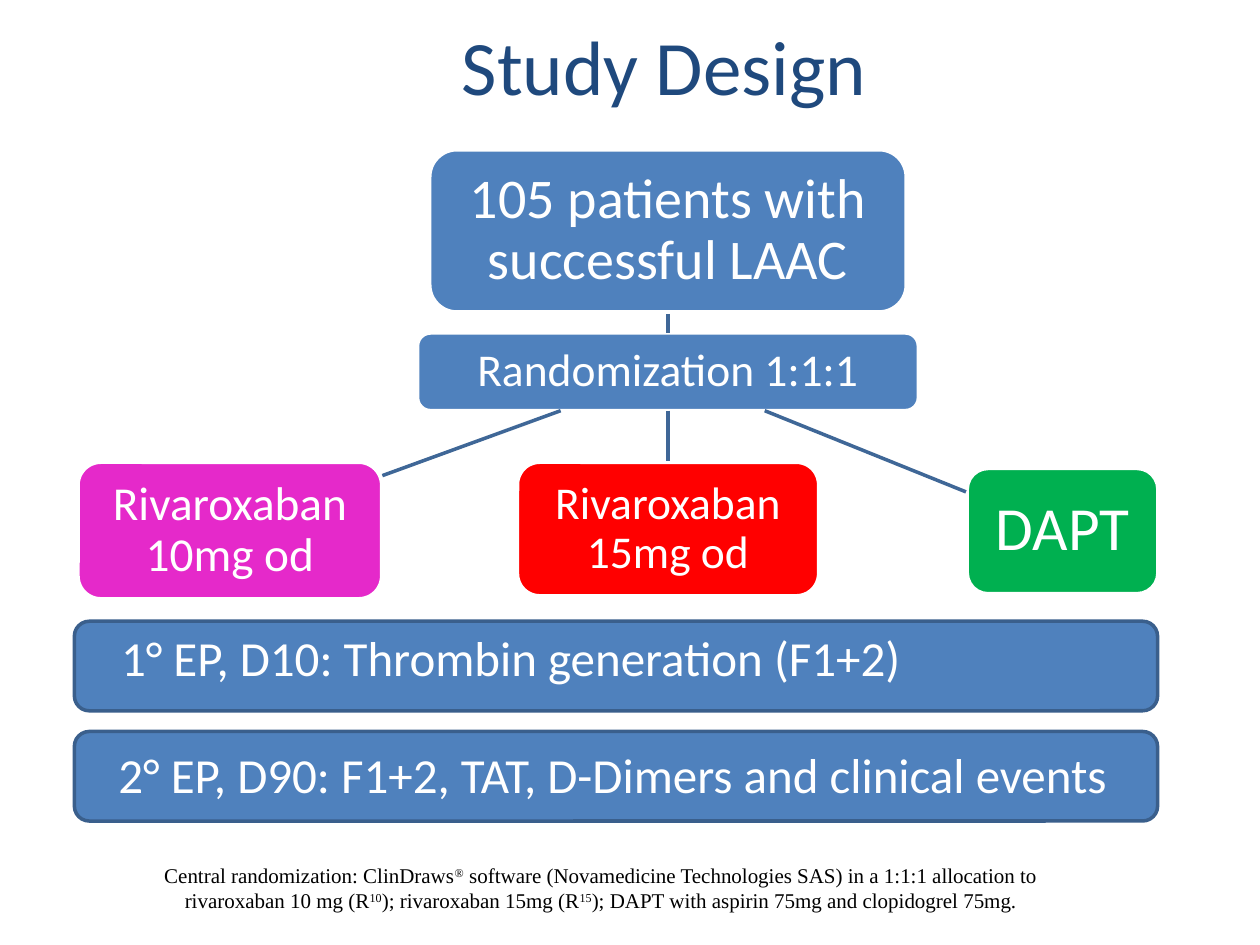
from lxml.etree import SubElement
from pptx import Presentation
from pptx.dml.color import RGBColor
from pptx.enum.shapes import MSO_CONNECTOR as CONNECTOR, MSO_SHAPE as SHAPE
from pptx.enum.text import MSO_ANCHOR as ANCHOR, PP_ALIGN as ALIGN
from pptx.oxml.ns import qn
from pptx.util import Pt


def color(value):
    return RGBColor.from_string(value)


def add_box(position, fill, outline, text, size, frame_format, paragraph_format):
    shape = slide.shapes.add_shape(SHAPE.ROUNDED_RECTANGLE, *map(Pt, position))
    shape.shadow.inherit = False
    shape.fill.solid()
    shape.fill.fore_color.rgb = color(fill)
    shape.line.color.rgb = color(outline)
    shape.line.width = Pt(2)
    frame = shape.text_frame
    for name, value in frame_format.items():
        setattr(frame, name, value)
    paragraph = frame.paragraphs[0]
    for name, value in paragraph_format.items():
        setattr(paragraph, name, value)
    run = paragraph.add_run()
    run.text = text
    run.font.name = "Calibri"
    run.font.size = Pt(size)
    run.font.color.rgb = color("FFFFFF")


BLUE = "4F81BD"
presentation = Presentation()
presentation.slide_width = Pt(720)
presentation.slide_height = Pt(540)
slide = presentation.slides.add_slide(presentation.slide_layouts[5])

title = slide.shapes.title
title_format = {"left": 55.5, "top": -8, "width": 648, "height": 90}
for name, value in title_format.items():
    setattr(title, name, Pt(value))
title.text_frame.text = "Study Design"
title.text_frame.vertical_anchor = ANCHOR.MIDDLE
title_paragraph = title.text_frame.paragraphs[0]
title_paragraph.alignment = ALIGN.CENTER
title_font = title_paragraph.runs[0].font
title_font.name = "Calibri"
title_font.size = Pt(44)
title_font.color.rgb = color("1F497D")

flow_boxes = [
    ((245.6, 85.6, 272.3, 92.7), BLUE, "105 patients with successful LAAC", 32, 6.5),
    ((238.6, 190.3, 286.2, 44.4), BLUE, "Randomization 1:1:1", 26, 5),
    ((44.6, 264.2, 173.5, 78), "E529CA", "Rivaroxaban 10mg od", 27, 5),
    ((295.7, 264.2, 172.1, 76.3), "FF0000", "Rivaroxaban 15mg od", 26, 5),
    ((552.7, 267.7, 109, 71.6), "00B050", "DAPT", 35, 7),
]
for position, fill, text, size, margin in flow_boxes:
    frame_format = {"word_wrap": True, "vertical_anchor": ANCHOR.MIDDLE}
    for side in ("left", "top", "right", "bottom"):
        frame_format[f"margin_{side}"] = Pt(margin)
    paragraph_format = {"alignment": ALIGN.CENTER, "line_spacing": 0.9}
    add_box(position, fill, "FFFFFF", text, size, frame_format, paragraph_format)

branches = [
    (381.6, 179.3, 381.6, 190.2),
    (437, 234.7, 552, 281.1),
    (381.6, 234.7, 381.6, 263.3),
    (320.4, 234.7, 218.5, 271.8),
]
for ends in branches:
    connector = slide.shapes.add_connector(CONNECTOR.STRAIGHT, *map(Pt, ends))
    connector.line.color.rgb = color("3F6797")
    connector.line.width = Pt(2)
    SubElement(connector.element.spPr, qn("a:effectLst"))

endpoints = [
    (355, "1° EP, D10: Thrombin generation (F1+2)", 24.2, 1),
    (418, "2° EP, D90: F1+2, TAT, D-Dimers and clinical events", 22.7, 4.8),
]
for top, text, left_margin, top_margin in endpoints:
    frame_format = {
        "word_wrap": True,
        "vertical_anchor": ANCHOR.TOP,
        "margin_left": Pt(left_margin),
        "margin_top": Pt(top_margin),
        "margin_right": 0,
        "margin_bottom": 0,
    }
    add_box((42.5, top, 619, 51.2), BLUE, "3A5F8C", text, 28,
            frame_format, {"alignment": ALIGN.LEFT})

footnote = slide.shapes.add_textbox(Pt(65.5), Pt(489.4), Pt(555.8), Pt(36))
footnote.text_frame.word_wrap = True
footnote_paragraph = footnote.text_frame.paragraphs[0]
footnote_paragraph.alignment = ALIGN.CENTER
footnote_parts = [
    ("Central randomization: ClinDraws", False),
    ("®", True),
    (" software (Novamedicine Technologies SAS) in a 1:1:1 allocation to rivaroxaban 10 mg (R", False),
    ("10", True),
    ("); rivaroxaban 15mg (R", False),
    ("15", True),
    ("); DAPT with aspirin 75mg and clopidogrel 75mg.", False),
]
for text, raised in footnote_parts:
    run = footnote_paragraph.add_run()
    run.text = text
    run.font.name = "Times New Roman"
    run.font.size = Pt(12)
    run.font.color.rgb = color("000000")
    if raised:
        run._r.get_or_add_rPr().set("baseline", "30000")

presentation.save("out.pptx")
